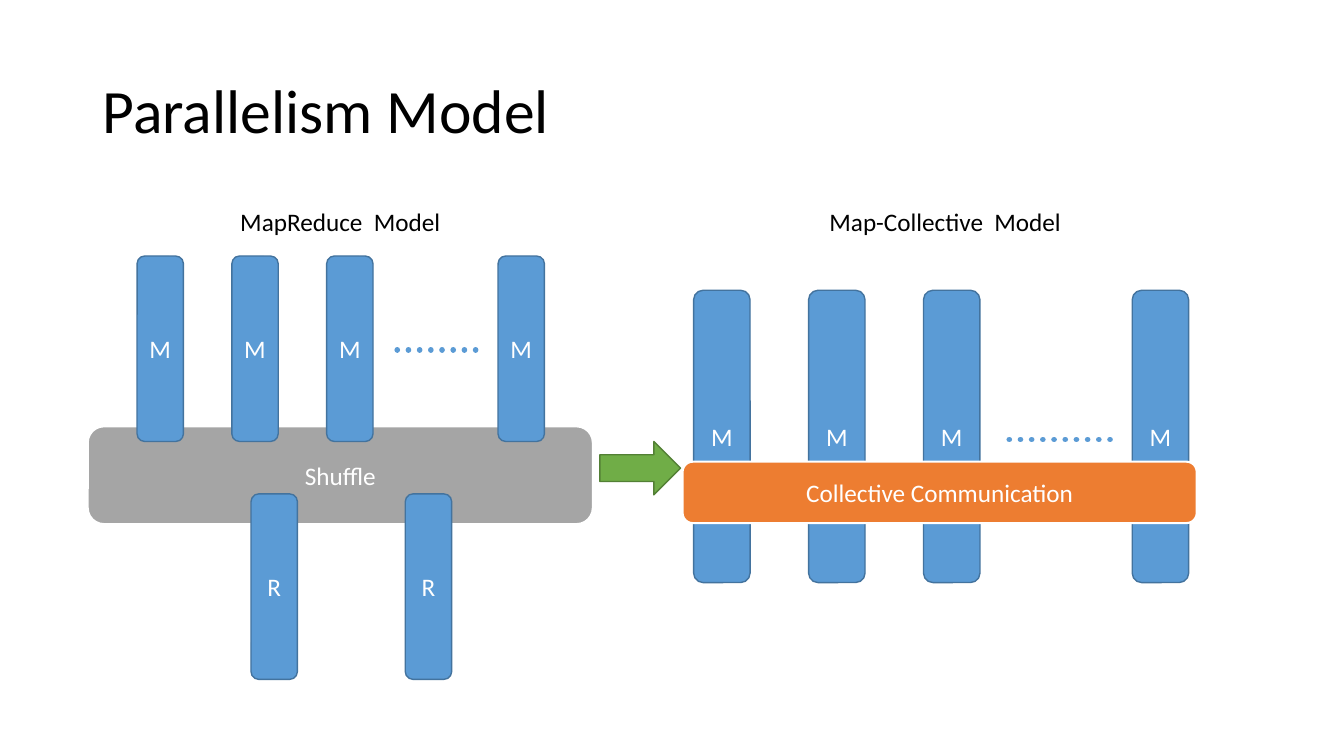
from lxml import etree
from pptx import Presentation
from pptx import util as u
from pptx.dml.color import RGBColor
from pptx.enum import dml, shapes, text
from pptx.oxml import ns

PX = 9144  # 100 px to the inch
FONT = "Calibri"
COLORS = {
    "white": "FFFFFF", "black": "000000", "gray": "A5A5A5",
    "blue": "5B9BD5", "navy": "43739E", "orange": "ED7D31",
    "green": "70AD47", "moss": "538035",
}
ROUND = shapes.MSO_SHAPE.ROUNDED_RECTANGLE
ARROW = shapes.MSO_SHAPE.RIGHT_ARROW
CENTER = text.PP_ALIGN.CENTER
LEFT = text.PP_ALIGN.LEFT
MIDDLE = text.MSO_ANCHOR.MIDDLE
TOP = text.MSO_ANCHOR.TOP


def color(name):
    return RGBColor.from_string(COLORS[name])


def emu(*sizes):
    return [u.Emu(size * PX) for size in sizes]


def write(shape, words, size, ink, align=CENTER, anchor=MIDDLE):
    frame = shape.text_frame
    frame.word_wrap = True
    frame.vertical_anchor = anchor
    para = frame.paragraphs[0]
    para.text = words
    para.alignment = align
    para.font.name = FONT
    para.font.size = u.Pt(size)
    para.font.color.rgb = color(ink)
    return para


def block(slide, kind, box, fill, edge, width=1, words=""):
    shape = slide.shapes.add_shape(kind, *emu(*box))
    shape.shadow.inherit = False
    shape.fill.solid()
    shape.fill.fore_color.rgb = color(fill)
    shape.line.color.rgb = color(edge)
    shape.line.width = u.Pt(width)
    if words:
        write(shape, words, 18, "white")


def label(slide, box, words):
    write(slide.shapes.add_textbox(*emu(*box)), words, 18, "black", anchor=TOP)


def dots(slide, left, right, y):
    line = slide.shapes.add_connector(
        shapes.MSO_CONNECTOR.STRAIGHT, *emu(left, y, right, y))
    line.line.color.rgb = color("blue")
    line.line.width = u.Pt(4)
    line.line.dash_style = dml.MSO_LINE.ROUND_DOT
    props = line._element.spPr
    props.find(ns.qn("a:ln")).set("cap", "rnd")
    etree.SubElement(props, ns.qn("a:effectLst"))


def bars(slide, word, lefts, y, width, height):
    for left in lefts:
        block(slide, ROUND, (left, y, width, height), "blue", "navy",
              words=word)


def title(slide, box):
    shape = slide.shapes.add_textbox(*emu(*box))
    para = write(shape, "Parallelism Model", 44, "black", LEFT)
    para.line_spacing = 0.9


def reduce(slide, x, y):
    """Map bars above a shuffle band, reduce bars below it."""
    label(slide, (x + 83, y, 335, 31), "MapReduce  Model")
    block(slide, ROUND, (x, y + 223, 501, 97), "gray", "white", 1.5,
          "Shuffle")
    maps = [x + 49 + 94 * i for i in range(3)] + [x + 407]
    bars(slide, "M", maps, y + 54, 46, 184)
    dots(slide, x + 307, x + 392, y + 147)
    bars(slide, "R", [x + 162, x + 315], y + 290, 46, 184)


def collect(slide, x, y):
    """Map bars crossed by a band of collective communication."""
    label(slide, (x + 93, y, 335, 31), "Map-Collective  Model")
    maps = [x + 11 + 114 * i for i in range(3)] + [x + 446]
    bars(slide, "M", maps, y + 88, 56, 290)
    dots(slide, x + 324, x + 427, y + 236)
    block(slide, ROUND, (x, y + 258, 510, 61), "orange", "white", 1.5,
          "Collective Communication")


def main():
    deck = Presentation()
    deck.slide_width, deck.slide_height = emu(1333, 750)
    slide = deck.slides.add_slide(deck.slide_layouts[6])
    title(slide, (92, 40, 1150, 145))
    reduce(slide, 87, 200)
    collect(slide, 677, 200)
    block(slide, ARROW, (595, 438, 80, 53), "green", "moss")
    deck.save("out.pptx")


if __name__ == "__main__":
    main()
